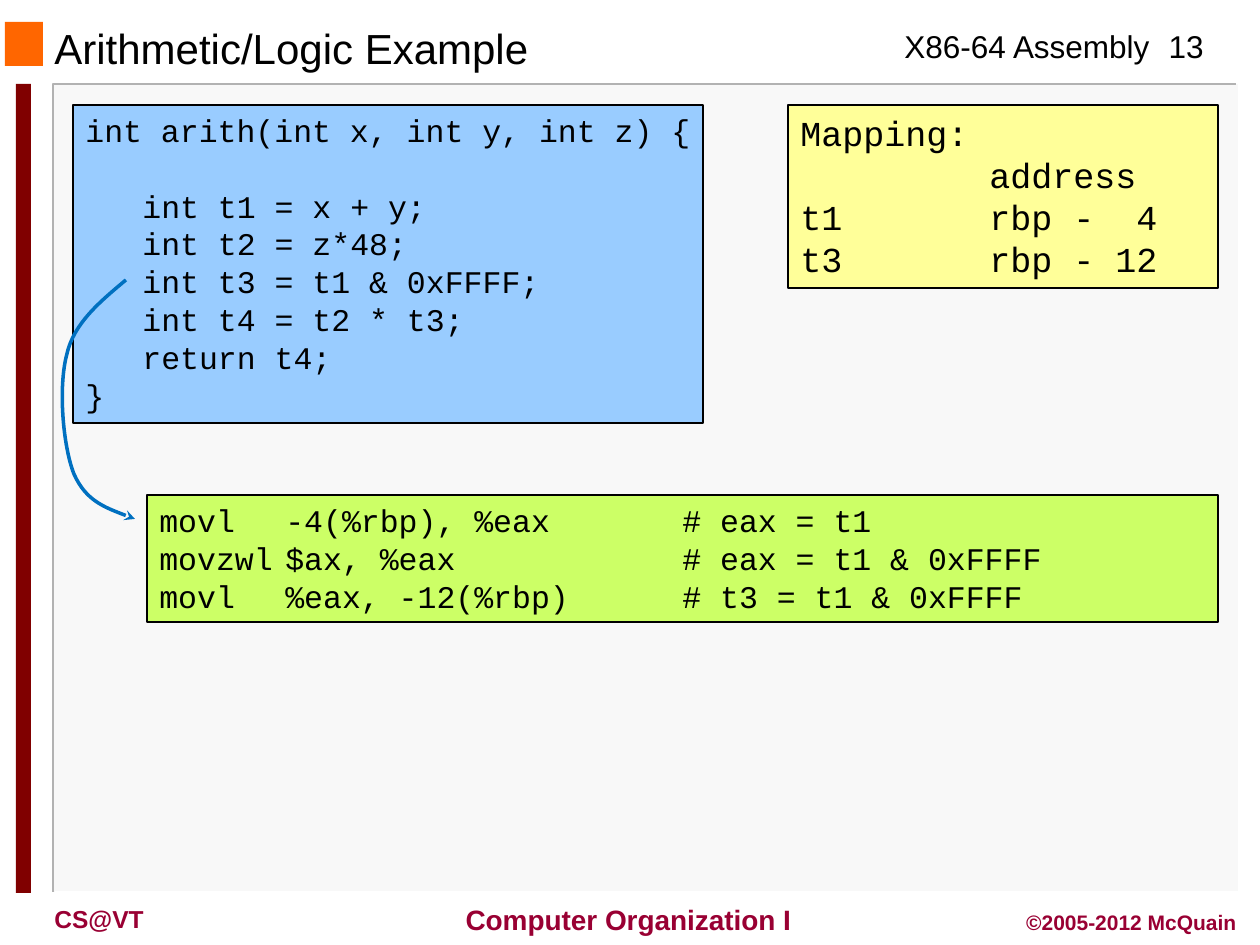
from dataclasses import dataclass

from lxml import etree
from pptx import Presentation
from pptx import util as u
from pptx.dml.color import RGBColor
from pptx.enum import shapes, text
from pptx.oxml.ns import qn

PX = 914400 / 126
LEFT, CENTER, RIGHT = text.PP_ALIGN.LEFT, text.PP_ALIGN.CENTER, text.PP_ALIGN.RIGHT
TOP, MIDDLE = text.MSO_ANCHOR.TOP, text.MSO_ANCHOR.MIDDLE


@dataclass(frozen=True)
class Theme:
    sans: str = "Arial"
    mono: str = "Courier New"
    black: str = "000000"
    white: str = "FFFFFF"
    panel: str = "F8F8F8"
    rule: str = "B2B2B2"
    orange: str = "FF6600"
    maroon: str = "800000"
    footer: str = "990033"
    blue: str = "99CCFF"
    yellow: str = "FFFF99"
    green: str = "CCFF66"
    arrow: str = "0070C0"
    title: int = 24
    mapping: int = 20
    body: int = 18
    course: int = 16
    school: int = 14
    rights: int = 12


def emu(px):
    return u.Emu(round(px * PX))


def rgb(value):
    return RGBColor.from_string(value)


def write(para, words, *, size, font, color, bold=False, align=LEFT, indent=0, before=0, stops=()):
    para.alignment = align
    para.space_before = u.Pt(before)
    props = para._p.get_or_add_pPr()
    if indent:
        props.set("marL", str(emu(indent)))
        props.set("indent", "0")
    if stops:
        tabs = etree.SubElement(props, qn("a:tabLst"))
        for stop in stops:
            etree.SubElement(tabs, qn("a:tab"), pos=str(emu(stop)), algn="l")
    span = para.add_run()
    span.text = words
    span.font.name = font
    span.font.size = u.Pt(size)
    span.font.bold = bold
    span.font.color.rgb = rgb(color)


class Painter:
    def __init__(self, theme, page):
        self.theme = theme
        self.page = page

    def box(self, left, top, width, height, fill, line=None):
        box = self.page.shapes.add_shape(
            shapes.MSO_SHAPE.RECTANGLE, *map(emu, (left, top, width, height)))
        box.shadow.inherit = False
        box.fill.solid()
        box.fill.fore_color.rgb = rgb(fill)
        if line:
            box.line.color.rgb = rgb(line)
            box.line.width = u.Pt(0.75)
        else:
            box.line.fill.background()
        return box

    def label(self, words, left, top, width, height, *, wrap=True, anchor=TOP, **style):
        box = self.page.shapes.add_textbox(*map(emu, (left, top, width, height)))
        frame = box.text_frame
        frame.word_wrap = wrap
        frame.vertical_anchor = anchor
        write(frame.paragraphs[0], words, **{"font": self.theme.sans, "color": self.theme.black, **style})

    def code(self, rows, left, top, width, height, *, fill, size, stops=()):
        frame = self.box(left, top, width, height, fill, self.theme.black).text_frame
        frame.word_wrap = True
        frame.vertical_anchor = TOP
        for index, (words, style) in enumerate(rows):
            para = frame.paragraphs[0] if index == 0 else frame.add_paragraph()
            write(para, words, size=size, font=self.theme.mono,
                  color=self.theme.black, stops=stops, **style)

    def outline(self, points, color, width):
        start, *rest = points
        builder = self.page.shapes.build_freeform(*start, scale=PX)
        builder.add_line_segments(rest, close=False)
        shape = builder.convert_to_shape()
        shape.shadow.inherit = False
        shape.fill.background()
        shape.line.color.rgb = rgb(color)
        shape.line.width = u.Pt(width)
        return shape

    def curved_arrow(self, points, color, width):
        shape = self.outline(points, color, width)
        route = next(shape._element.iter(qn("a:path")))
        segments = route.findall(qn("a:lnTo"))
        for first in range(0, len(segments), 3):
            curve = etree.SubElement(route, qn("a:cubicBezTo"))
            for segment in segments[first:first + 3]:
                curve.append(segment[0])
                route.remove(segment)
        etree.SubElement(shape.line._get_or_add_ln(), qn("a:tailEnd"), type="stealth")


def main():
    theme = Theme()
    deck = Presentation()
    deck.slide_width, deck.slide_height = u.Inches(10), u.Inches(7.5)
    page = deck.slides.add_slide(deck.slide_layouts[6])
    paint = Painter(theme, page)

    paint.box(54, 84, 1184, 808, theme.panel)
    paint.outline([(1236, 84), (53, 84), (53, 892)], theme.rule, 1)
    paint.outline([(1239, 84), (1239, 892), (55, 892)], theme.white, 1)
    paint.box(5, 22, 38, 44, theme.orange)
    paint.box(16, 84, 15, 809, theme.maroon)

    footer = {"color": theme.footer, "bold": True}
    paint.label("X86-64 Assembly", 892, 21, 273, 50, size=theme.body, wrap=False)
    paint.label("13", 1144, 21, 84, 50, size=theme.body, align=CENTER)
    paint.label("Computer Organization I", 445, 896, 367, 47, size=theme.course,
                align=CENTER, anchor=MIDDLE, wrap=False, **footer)
    paint.label("CS@VT", 42, 898, 189, 42, size=theme.school, **footer)
    paint.label("©2005-2012 McQuain", 987, 903, 262, 38, size=theme.rights, align=RIGHT, **footer)
    paint.label("Arithmetic/Logic Example", 42, 24, 798, 48, size=theme.title, anchor=MIDDLE)

    inner = {"indent": 57}
    paint.code([
        ("int arith(int x, int y, int z) {", {}),
        ("int t1 = x + y;", {**inner, "before": 21.5}),
        ("int t2 = z*48;", inner),
        ("int t3 = t1 & 0xFFFF;", inner),
        ("int t4 = t2 * t3;", inner),
        ("return t4;", inner),
        ("}", {}),
    ], 73, 105, 630, 318, fill=theme.blue, size=theme.body)

    paint.code([
        ("Mapping:", {}),
        ("address", {"indent": 189}),
        ("t1\trbp -  4", {}),
        ("t3\trbp - 12", {}),
    ], 788, 105, 430, 183, fill=theme.yellow, size=theme.mapping, stops=[189])

    paint.code([
        ("movl\t-4(%rbp), %eax\t# eax = t1", {}),
        ("movzwl\t$ax, %eax\t# eax = t1 & 0xFFFF", {}),
        ("movl\t%eax, -12(%rbp)\t# t3 = t1 & 0xFFFF", {}),
    ], 147, 495, 1071, 127, fill=theme.green, size=theme.body, stops=[126, 523])

    paint.curved_arrow([
        (126, 280), (101, 301), (74, 323), (67, 354),
        (58, 387), (63, 446), (74, 474),
        (86, 501), (111, 510), (135, 519),
    ], theme.arrow, 2)

    deck.save("out.pptx")


if __name__ == "__main__":
    main()
